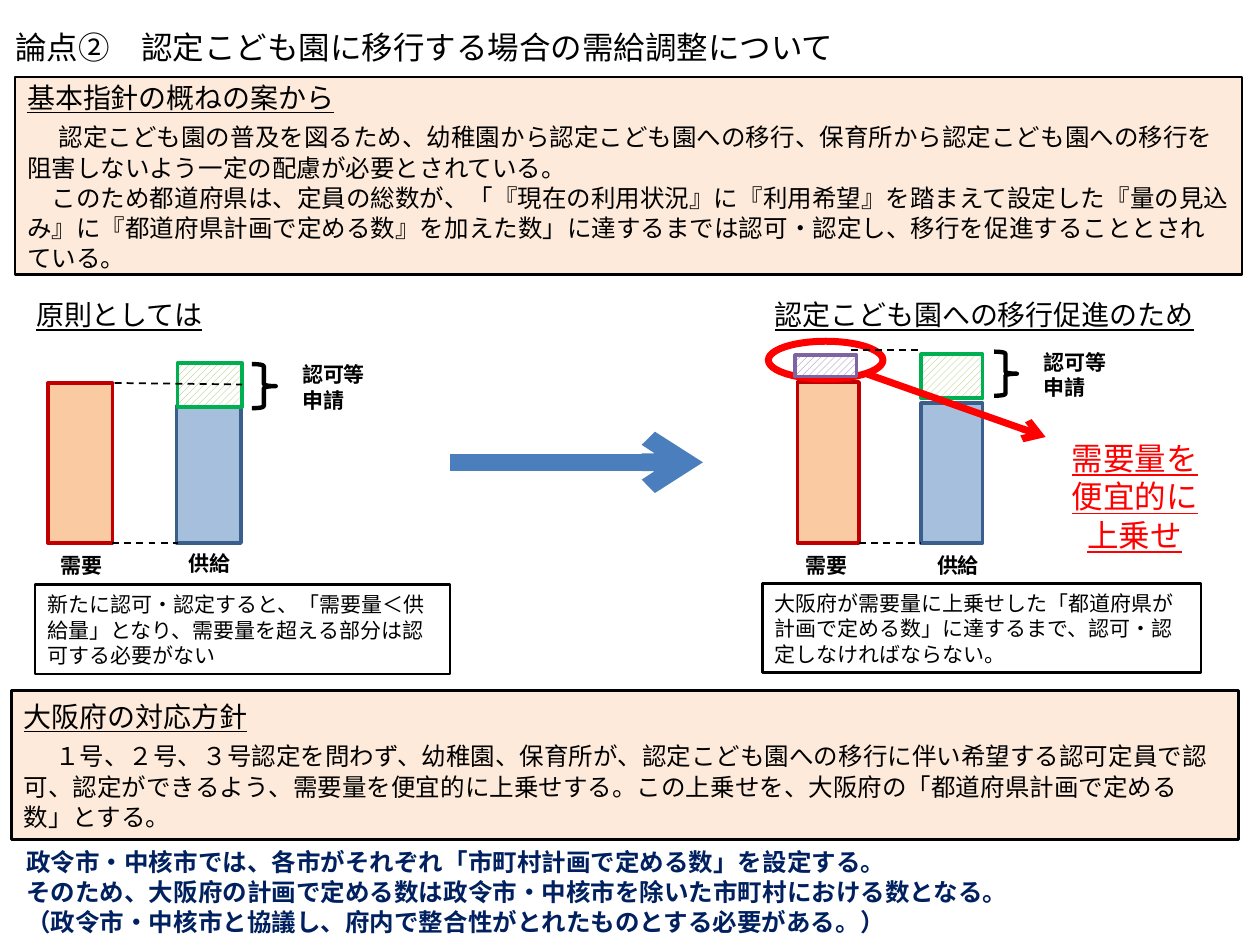
from lxml import etree
from pptx import Presentation
from pptx import util as u
from pptx.dml.color import RGBColor
from pptx.enum import dml, shapes, text
from pptx.oxml.ns import qn

HUE = {
    "black": "000000", "white": "FFFFFF", "navy": "002060", "red": "FF0000",
    "peach": "FDEADA", "arrow": "4B7EBC", "blue": "4F81BD", "edge": "3A5F8C",
    "gold": "F79646", "wine": "C00000", "green": "00B050", "leaf": "9BBB59",
    "plum": "8064A2",
}
RGB = {name: RGBColor.from_string(code) for name, code in HUE.items()}
GOTH = "Noto Sans CJK JP"
KIND = shapes.MSO_SHAPE

deck = Presentation()
deck.slide_width, deck.slide_height = u.Cm(25.4), u.Cm(19.05)
slide = deck.slides.add_slide(deck.slide_layouts[5])
tree = slide.shapes


def write(frame, rows, color="black", align="LEFT", anchor="TOP"):
    form = {"word_wrap": True, "auto_size": text.MSO_AUTO_SIZE.NONE,
            "vertical_anchor": getattr(text.MSO_ANCHOR, anchor)}
    for key, val in form.items():
        setattr(frame, key, val)
    for i, runs in enumerate(rows):
        para = frame.add_paragraph() if i else frame.paragraphs[0]
        para.alignment = getattr(text.PP_ALIGN, align)
        para.line_spacing = u.Pt(round(runs[-1][1] * 1.22, 1))
        para.space_before = u.Pt(5 if len(runs) > 1 else 0)
        for words, size, face, style in runs:
            run = para.add_run()
            run.text = words
            look = {"name": face, "size": u.Pt(size), "bold": False, **style}
            for key, val in look.items():
                setattr(run.font, key, val)
            run.font.color.rgb = RGB[color]
            if face == GOTH:
                mark = etree.Element(qn("a:ea"), typeface=face)
                run.font._element.find(qn("a:latin")).addnext(mark)


def draw(kind, area, edge, width, fill=None, mode="solid"):
    item = tree.add_shape(kind, *map(u.Cm, area))
    item.shadow.inherit = False
    item.line.color.rgb, item.line.width = RGB[edge], u.Pt(width)
    if not fill:
        item.fill.background()
    elif mode == "hatch":
        item.fill.patterned()
        item.fill.pattern = dml.MSO_PATTERN.WIDE_UPWARD_DIAGONAL
        item.fill.fore_color.rgb = RGB[fill]
        item.fill.back_color.rgb = RGB["white"]
    else:
        item.fill.solid()
        item.fill.fore_color.rgb = RGB[fill]
        if mode == "half":
            tone = item.element.spPr.find(qn("a:solidFill"))[0]
            etree.SubElement(tone, qn("a:alpha"), val="50000")
    return item


title = tree.title
place = {"left": 0.05, "top": 0.43, "width": 25.1, "height": 1.02}
for key, val in place.items():
    setattr(title, key, u.Cm(val))
write(title.text_frame, [[("論点②　認定こども園に移行する場合の需給調整について", 18, GOTH, {})]])

under, bold = {"underline": True}, {"bold": True}
panels = [
    ((0.3, 1.55, 24.74, 3.99), "基本指針の概ねの案から", [
        "認定こども園の普及を図るため、幼稚園から認定こども園への移行、保育所から認定こども園への移行を阻害しないよう一定の配慮が必要とされている。",
        "　このため都道府県は、定員の総数が、「『現在の利用状況』に『利用希望』を踏まえて設定した『量の見込み』に『都道府県計画で定める数』を加えた数」に達するまでは認可・認定し、移行を促進することとされている。"]),
    ((0.23, 13.92, 24.74, 3), "大阪府の対応方針", [
        "１号、２号、３号認定を問わず、幼稚園、保育所が、認定こども園への移行に伴い希望する認可定員で認可、認定ができるよう、需要量を便宜的に上乗せする。この上乗せを、大阪府の「都道府県計画で定める数」とする。"]),
]
for area, head, body in panels:
    rows = [[(head, 16, GOTH, under)]] + [[(row, 14, GOTH, {})] for row in body]
    rows[1].insert(0, ("　", 18, "Calibri", {}))
    panel = draw(KIND.RECTANGLE, area, "black", 1.5, "peach")
    write(panel.text_frame, rows, anchor="MIDDLE")

cases = [
    ((0.71, 11.79, 8.36, 1.8), "新たに認可・認定すると、「需要量＜供給量」となり、需要量を超える部分は認可する必要がない"),
    ((15.37, 11.76, 8.84, 1.8), "大阪府が需要量に上乗せした「都道府県が計画で定める数」に達するまで、認可・認定しなければならない。"),
]
for area, words in cases:
    case = draw(KIND.RECTANGLE, area, "black", 1.5, "white")
    write(case.text_frame, [[(words, 12, GOTH, {})]], anchor="MIDDLE")

bars = [
    ((3.56, 8.18, 1.3, 2.77), "edge", "blue", "half"),
    ((0.97, 7.72, 1.3, 3.23), "wine", "gold", "half"),
    ((3.58, 7.32, 1.3, 0.89), "green", "leaf", "hatch"),
    ((18.57, 8.13, 1.24, 2.82), "edge", "blue", "half"),
    ((16.08, 7.7, 1.24, 3.25), "wine", "gold", "half"),
    ((18.57, 7.14, 1.24, 0.89), "green", "leaf", "hatch"),
]
for area, edge, fill, mode in bars:
    draw(KIND.RECTANGLE, area, edge, 2, fill, mode)
for area in [(5.08, 7.34, 0.48, 0.89), (20.04, 7.09, 0.46, 0.89)]:
    draw(KIND.RIGHT_BRACE, area, "black", 2.5)
draw(KIND.OVAL, (15.49, 6.88, 2.31, 0.76), "red", 4)
draw(KIND.RECTANGLE, (16.03, 7.16, 1.24, 0.43), "plum", 2, "plum", "hatch")

lines = [
    ((9.07, 9.32, 14.17, 9.32), "arrow", 10, True),
    ((2.26, 10.95, 3.58, 10.95), "black", 1, False),
    ((2.31, 7.72, 4.88, 7.75), "black", 1, False),
    ((17.32, 10.95, 18.57, 10.95), "black", 1, False),
    ((17.15, 7.06, 18.57, 7.06), "black", 1, False),
    ((17.48, 7.54, 21.08, 8.81), "red", 4, True),
]
for ends, color, width, tip in lines:
    link = tree.add_connector(shapes.MSO_CONNECTOR.STRAIGHT, *map(u.Cm, ends))
    link.line.color.rgb, link.line.width = RGB[color], u.Pt(width)
    if tip:
        etree.SubElement(link.line._get_or_add_ln(), qn("a:tailEnd"), type="arrow")
    else:
        link.line.dash_style = dml.MSO_LINE.DASH
    etree.SubElement(link.element.spPr, qn("a:effectLst"))

notes = [
    ((0.28, 16.94, 24.77, 2.06), [
        "政令市・中核市では、各市がそれぞれ「市町村計画で定める数」を設定する。",
        "そのため、大阪府の計画で定める数は政令市・中核市を除いた市町村における数となる。",
        "（政令市・中核市と協議し、府内で整合性がとれたものとする必要がある。）"],
     14, GOTH, bold, "navy", "LEFT"),
    ((0.48, 5.87, 5.21, 0.69), ["原則としては"], 16, GOTH, under, "black", "LEFT"),
    ((15.37, 5.87, 9.53, 0.69), ["認定こども園への移行促進のため"], 16, GOTH, under, "black", "LEFT"),
    ((20.68, 8.71, 4.39, 1.88), ["需要量を", "便宜的に", "上乗せ"], 18, GOTH, under, "red", "CENTER"),
]
tags = [
    ((0.97, 11, 1.73, 0.76), ["需要"]),
    ((3.56, 10.97, 1.73, 0.76), ["供給"]),
    ((5.84, 7.16, 2.34, 1.27), ["認可等", "申請"]),
    ((15.98, 11, 1.98, 0.76), ["需要"]),
    ((18.64, 11, 2.13, 0.76), ["供給"]),
    ((20.78, 6.91, 2.74, 1.27), ["認可等", "申請"]),
]
notes += [(area, rows, 12, "Calibri", bold, "black", "LEFT") for area, rows in tags]
for area, rows, size, face, style, color, align in notes:
    note = tree.add_textbox(*map(u.Cm, area))
    write(note.text_frame, [[(row, size, face, style)] for row in rows], color, align)

deck.save("out.pptx")
